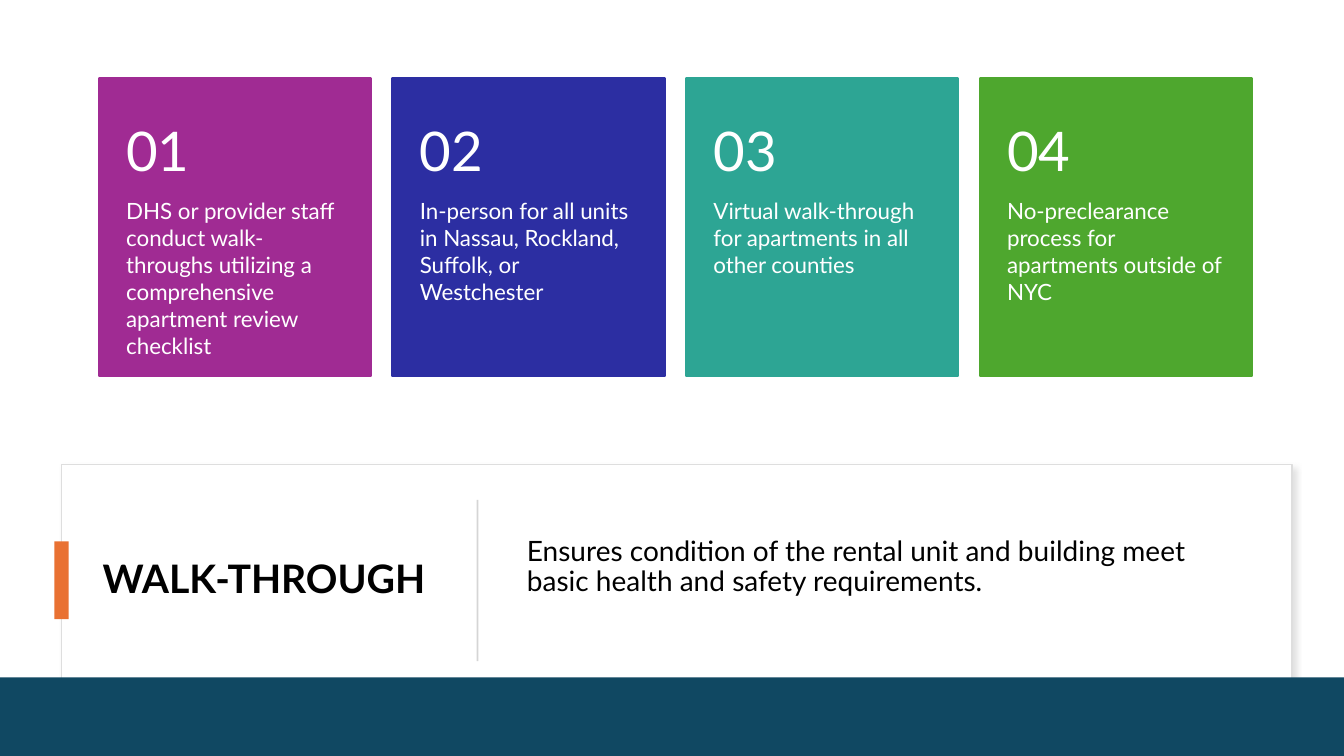
import dataclasses
import typing

import lxml.etree
import pptx
import pptx.dml.color
import pptx.enum.shapes
import pptx.enum.text
import pptx.oxml.ns
import pptx.util

Cm = pptx.util.Cm
Pt = pptx.util.Pt
MIDDLE = pptx.enum.text.MSO_ANCHOR.MIDDLE
TOP = pptx.enum.text.MSO_ANCHOR.TOP


@dataclasses.dataclass
class Box:
    left: float
    top: float
    width: float
    height: float


@dataclasses.dataclass
class Style:
    size: float
    color: str
    bold: bool = False
    anchor: typing.Any = TOP
    spacing: float = 1.0
    after: float = 6
    indent: float = 0
    insets: tuple[float, float, float, float] = (0.25, 0.13, 0.25, 0.13)


@dataclasses.dataclass
class Card:
    fill: str
    text: str


NUMBER = Style(39, "FFFFFF", anchor=MIDDLE, spacing=0.9, after=13.65,
               insets=(0.69, 0.46, 0.69, 0.46))
DETAIL = Style(16, "FFFFFF", insets=(0.69, 0, 0.69, 0.91))
TITLE = Style(28, "000000", bold=True, anchor=MIDDLE, spacing=0.9)
BODY = Style(20, "000000", anchor=MIDDLE, spacing=0.9, indent=0.3)

CARDS = [
    Card("A02B93", "DHS or provider staff conduct walk-throughs utilizing "
                   "a comprehensive apartment review checklist"),
    Card("2C2EA2", "In-person for all units in Nassau, Rockland, Suffolk, "
                   "or Westchester"),
    Card("2DA594", "Virtual walk-through for apartments in all other counties"),
    Card("4EA72E", "No-preclearance process for apartments outside of NYC"),
]
CARD_LEFT, CARD_STEP, CARD_WIDTH = 2.49, 7.4, 6.86


def paint(target: typing.Any, color: str) -> None:
    target.rgb = pptx.dml.color.RGBColor.from_string(color)


def place(box: Box) -> list[int]:
    return [Cm(value) for value in dataclasses.astuple(box)]


def add_rect(shapes: typing.Any, box: Box, fill: str,
             line: str = "", weight: float = 1) -> typing.Any:
    rect = shapes.add_shape(
        pptx.enum.shapes.MSO_SHAPE.RECTANGLE, *place(box))
    rect.shadow.inherit = False
    rect.fill.solid()
    paint(rect.fill.fore_color, fill)
    if line:
        rect.line.fill.solid()
        paint(rect.line.fill.fore_color, line)
        rect.line.width = Pt(weight)
    else:
        rect.line.fill.background()
    return rect


def add_text(shapes: typing.Any, box: Box, text: str, style: Style) -> None:
    frame = shapes.add_textbox(*place(box)).text_frame
    frame.word_wrap = True
    frame.vertical_anchor = style.anchor
    (frame.margin_left, frame.margin_top,
     frame.margin_right, frame.margin_bottom) = map(Cm, style.insets)
    para = frame.paragraphs[0]
    para.line_spacing = style.spacing
    para.space_after = Pt(style.after)
    if style.indent:
        para._p.get_or_add_pPr().set("marL", str(Cm(style.indent)))
    run = para.add_run()
    run.text = text
    run.font.name = "Lato"
    run.font.size = Pt(style.size)
    run.font.bold = style.bold
    paint(run.font.color, style.color)


def add_shadow(shape: typing.Any, color: str) -> None:
    qn = pptx.oxml.ns.qn
    effects = shape._element.spPr.find(qn("a:effectLst"))
    shadow = lxml.etree.SubElement(
        effects, qn("a:outerShdw"), blurRad=str(Pt(4)), dist=str(Pt(3)),
        dir=str(45 * 60000), algn="tl", rotWithShape="0")
    tint = lxml.etree.SubElement(shadow, qn("a:srgbClr"), val=color)
    lxml.etree.SubElement(tint, qn("a:alpha"), val="50000")


def add_card(shapes: typing.Any, index: int, card: Card) -> None:
    left = CARD_LEFT + index * CARD_STEP
    add_rect(shapes, Box(left, 1.98, CARD_WIDTH, 7.49),
             card.fill, card.fill, 1.5)
    add_text(shapes, Box(left, 4.98, CARD_WIDTH, 4.5), card.text, DETAIL)
    add_text(shapes, Box(left, 2.64, CARD_WIDTH, 2.46),
             f"{index + 1:02}", NUMBER)


def main() -> None:
    deck = pptx.Presentation()
    deck.slide_width, deck.slide_height = Cm(33.87), Cm(19.05)
    shapes = deck.slides.add_slide(deck.slide_layouts[6]).shapes

    # Heading panel
    panel = add_rect(shapes, Box(1.55, 11.71, 31.01, 5.79),
                     "FFFFFF", "DEDEDE")
    add_shadow(panel, "C5C5C5")
    add_text(shapes, Box(2.34, 12.34, 9.17, 4.57), "WALK-THROUGH", TITLE)
    add_rect(shapes, Box(1.37, 13.64, 0.36, 1.96), "E97132")
    add_rect(shapes, Box(12.01, 12.6, 0.05, 4.06), "D5D5D5")
    add_text(shapes, Box(12.73, 11.71, 19.05, 5.18),
             "Ensures condition of the rental unit and building meet "
             "basic health and safety requirements.", BODY)

    # Footer band
    add_rect(shapes, Box(0, 17.07, 33.87, 1.98), "104862")

    # Numbered cards
    group = shapes.add_group_shape()
    for index, card in enumerate(CARDS):
        add_card(group.shapes, index, card)

    deck.save("out.pptx")


if __name__ == "__main__":
    main()
